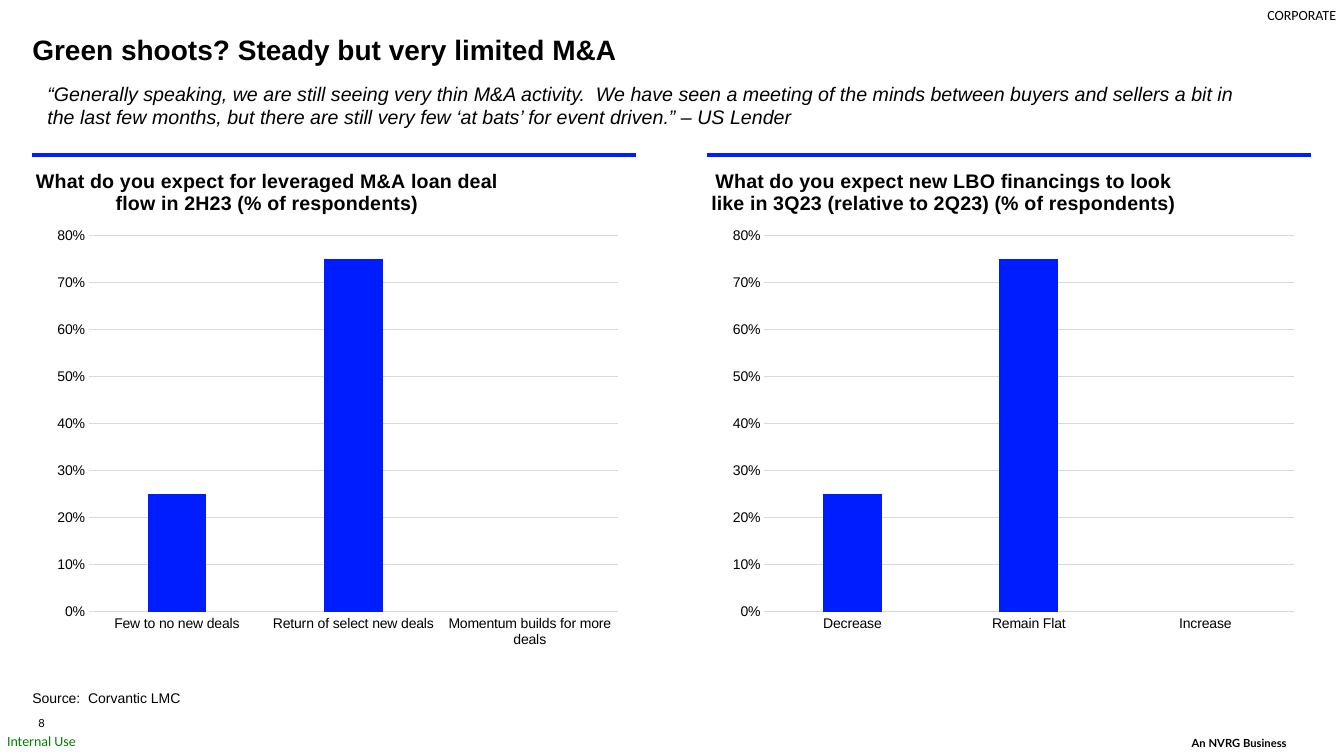
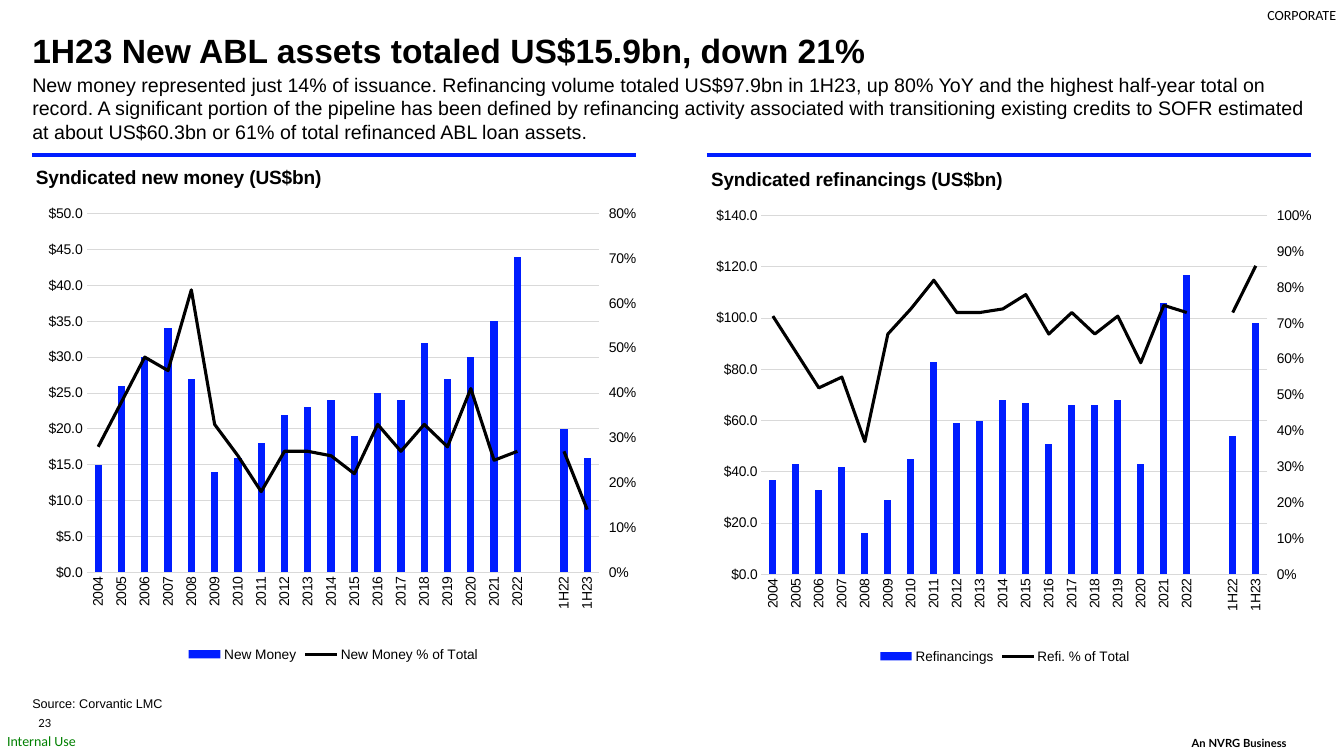
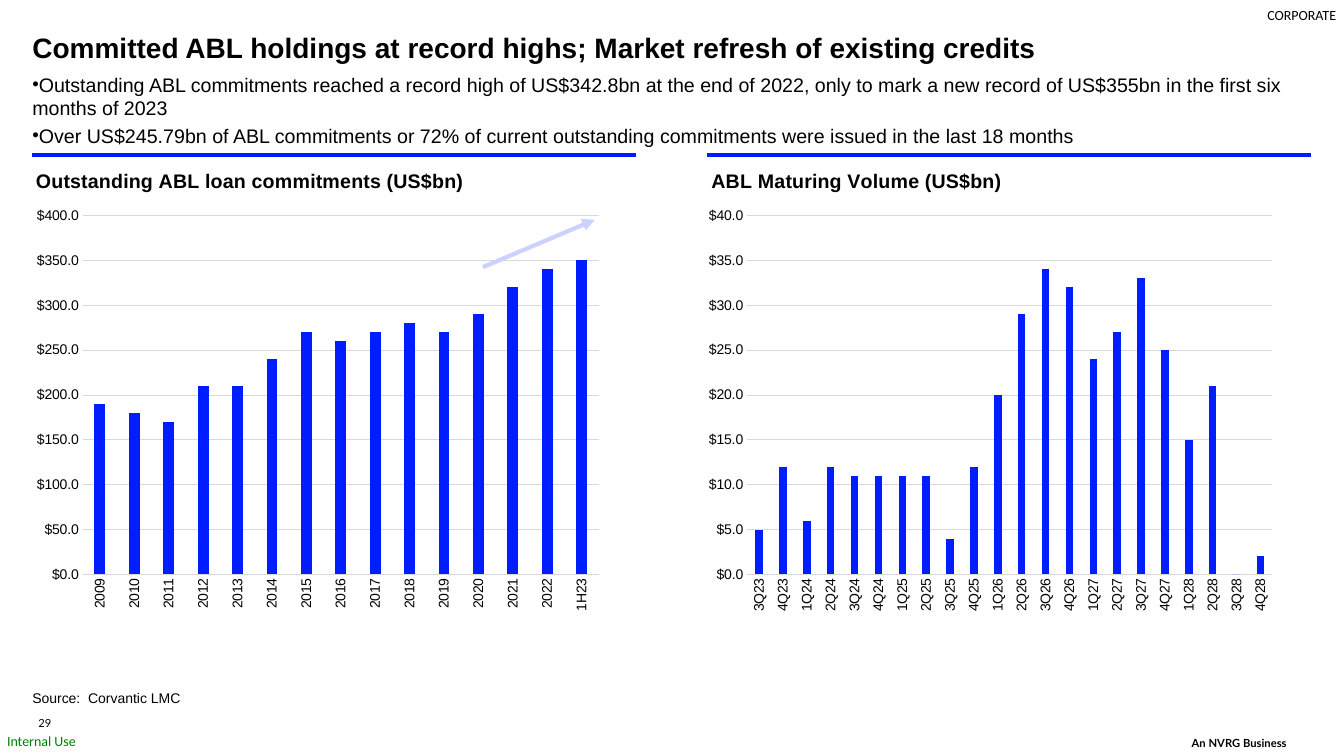
from pptx import Presentation
from pptx.chart.data import CategoryChartData
from pptx.dml.color import RGBColor
from pptx.enum import chart as ch, shapes, text
from pptx.oxml import parse_xml
from pptx.oxml.ns import nsdecls, qn
from pptx.util import Inches, Pt

BLUE = RGBColor(0x00, 0x1D, 0xFF)
PALE_BLUE = RGBColor(0xCC, 0xD2, 0xFF)
GRID_GRAY = RGBColor(0xD9, 0xD9, 0xD9)
GREEN = RGBColor(0x00, 0x80, 0x00)
BLACK = RGBColor(0, 0, 0)

BODY_FONT = "Arial"
LEFT, RIGHT, RIGHT_CHART = 0.32, 7.01, 7.02
COLUMN_WIDTH, FULL_WIDTH = 5.99, 12.68
CHART_TOP, CHART_HEIGHT = 1.63, 5
DOLLARS, PERCENT = '"$"#,##0.0', "0%"


def style_font(font, size, color=BLACK, name=BODY_FONT, bold=False, italic=False):
    font.size, font.name = Pt(size), name
    font.bold, font.italic = bold, italic
    font.color.rgb = color


def fill_frame(frame, lines, anchor=text.MSO_ANCHOR.TOP, bullet=False,
               space_before=0, line_spacing=None, **font_format):
    """Write one paragraph per line into a frame without insets."""
    frame.word_wrap = True
    frame.auto_size = text.MSO_AUTO_SIZE.NONE
    frame.vertical_anchor = anchor
    frame.margin_left = frame.margin_right = 0
    frame.margin_top = frame.margin_bottom = 0
    for index, line in enumerate(lines):
        para = frame.paragraphs[0] if index == 0 else frame.add_paragraph()
        para.alignment = text.PP_ALIGN.LEFT
        if line_spacing:
            para.line_spacing = line_spacing
        if index:
            para.space_before = Pt(space_before)
        if bullet:
            props = para._p.get_or_add_pPr()
            props.set("marL", "0")
            props.set("indent", "0")
            for xml in ('<a:buSzPct {} val="95000"/>', '<a:buFont {} typeface="Arial"/>',
                        '<a:buChar {} char="•"/>'):
                props.append(parse_xml(xml.format(nsdecls("a"))))
        span = para.add_run()
        span.text = line
        style_font(span.font, **font_format)


def add_text(page, left, top, width, height, *lines, **text_format):
    box = page.shapes.add_textbox(Inches(left), Inches(top), Inches(width), Inches(height))
    fill_frame(box.text_frame, lines, **text_format)


def add_line(page, start, end, color, arrow=False):
    line = page.shapes.add_connector(
        shapes.MSO_CONNECTOR.STRAIGHT, *(Inches(value) for value in (*start, *end)))
    line.line.color.rgb = color
    line.line.width = Pt(3)
    if arrow:
        line.line._get_or_add_ln().append(
            parse_xml(f'<a:tailEnd {nsdecls("a")} type="triangle"/>'))
    line._element.spPr.append(parse_xml(f'<a:effectLst {nsdecls("a")}/>'))


def add_page(deck, number, title, title_size=20, title_top=0.34):
    """Add a slide with its title and the marks that every slide carries."""
    page = deck.slides.add_slide(deck.slide_layouts[5])
    heading = page.shapes.title
    heading.left, heading.top = Inches(LEFT), Inches(title_top)
    heading.width, heading.height = Inches(FULL_WIDTH), Inches(0.39)
    fill_frame(heading.text_frame, [title], size=title_size, bold=True, line_spacing=0.9)

    bottom = text.MSO_ANCHOR.BOTTOM
    add_text(page, 0.38, 7.04, 0.39, 0.2, str(number), size=8, name="Lato", anchor=bottom)
    add_text(page, 11.82, 7.24, 1.5, 0.2, "An NVRG Business",
             size=8, name="Lato", bold=True, anchor=bottom)
    add_text(page, 12.57, 0.06, 0.73, 0.17, "CORPORATE", size=10, name="Calibri")
    add_text(page, 0.07, 7.27, 0.72, 0.17, "Internal Use",
             size=10, name="Calibri", color=GREEN)
    for left in (LEFT, RIGHT):
        add_line(page, (left, 1.535), (left + COLUMN_WIDTH, 1.535), BLUE)
    return page


def add_source(page, line, top=6.84, size=10):
    add_text(page, LEFT, top, 3.18, 0.27, line, size=size)


def set_layout(parent, position, **places):
    """Give a chart part a manual layout, as fractions of the chart."""
    old = parent.find(qn("c:layout"))
    if old is not None:
        parent.remove(old)
    target = '<c:layoutTarget val="inner"/>' if "w" in places else ""
    modes = '<c:xMode val="edge"/><c:yMode val="edge"/>'
    values = "".join(f'<c:{key} val="{value}"/>' for key, value in places.items())
    parent.insert(position, parse_xml(
        f'<c:layout {nsdecls("c")}><c:manualLayout>{target}{modes}{values}'
        '</c:manualLayout></c:layout>'))


def move_to_right_axis(chart, top):
    """Turn the second column series into a line on a percentage axis."""
    columns = chart.plots[0]._element
    series = columns.findall(qn("c:ser"))[1]
    invert = series.find(qn("c:invertIfNegative"))
    if invert is not None:
        series.remove(invert)
    line_plot = parse_xml(
        f'<c:lineChart {nsdecls("c")}><c:grouping val="standard"/>'
        '<c:varyColors val="0"/><c:marker val="1"/>'
        '<c:axId val="5001"/><c:axId val="5002"/></c:lineChart>')
    line_plot.insert(2, series)
    columns.addnext(line_plot)
    hidden_axis = parse_xml(
        f'<c:catAx {nsdecls("c")}><c:axId val="5001"/>'
        '<c:scaling><c:orientation val="minMax"/></c:scaling><c:delete val="1"/>'
        '<c:axPos val="b"/><c:crossAx val="5002"/><c:crosses val="autoZero"/></c:catAx>')
    right_axis = parse_xml(
        f'<c:valAx {nsdecls("c", "a")}><c:axId val="5002"/>'
        f'<c:scaling><c:orientation val="minMax"/><c:max val="{top}"/><c:min val="0"/>'
        '</c:scaling><c:delete val="0"/><c:axPos val="r"/>'
        f'<c:numFmt formatCode="{PERCENT}" sourceLinked="0"/>'
        '<c:majorTickMark val="out"/><c:minorTickMark val="none"/>'
        '<c:tickLblPos val="nextTo"/><c:spPr><a:ln><a:noFill/></a:ln></c:spPr>'
        '<c:crossAx val="5001"/><c:crosses val="max"/><c:majorUnit val="0.1"/></c:valAx>')
    chart.value_axis._element.addnext(right_axis)
    right_axis.addnext(hidden_axis)

    line = chart.plots[1].series[0]
    line.smooth = False
    line.marker.style = ch.XL_MARKER_STYLE.NONE
    line.format.line.color.rgb = BLACK
    line.format.line.width = Pt(2.25)


def style_axes(chart, number_format, top, step, upright):
    values, categories = chart.value_axis, chart.category_axis
    values.minimum_scale, values.maximum_scale, values.major_unit = 0, top, step
    values.tick_labels.number_format = number_format
    values.tick_labels.number_format_is_linked = False
    values.format.line.fill.background()
    for line in (values.major_gridlines.format.line, categories.format.line):
        line.color.rgb = GRID_GRAY
        line.width = Pt(0.75)
    for axis in (values, categories):
        axis.major_tick_mark = axis.minor_tick_mark = ch.XL_TICK_MARK.NONE
        style_font(axis.tick_labels.font, 10)
    if upright:
        body = categories._element.find(qn("c:txPr")).find(qn("a:bodyPr"))
        body.set("rot", "-5400000")
        body.set("vert", "horz")


def add_column_chart(page, left, title, categories, series, top, step, plot_area,
                     stacked=True, number_format=DOLLARS, right_top=None,
                     chart_top=CHART_TOP, title_size=14):
    """Add a column chart; plot_area is left, top, width, height in inches."""
    data = CategoryChartData()
    data.categories = categories
    for name, values in series.items():
        data.add_series(name, values)
    kind = ch.XL_CHART_TYPE.COLUMN_STACKED if stacked else ch.XL_CHART_TYPE.COLUMN_CLUSTERED
    chart = page.shapes.add_chart(
        kind, Inches(left), Inches(chart_top), Inches(COLUMN_WIDTH),
        Inches(CHART_HEIGHT), data).chart
    style_font(chart.font, 10)

    chart.has_title = True
    chart.chart_title.text_frame.text = title
    style_font(chart.chart_title.text_frame.paragraphs[0].runs[0].font, title_size, bold=True)
    set_layout(chart.chart_title._element, 1, x=0, y=0)

    columns = chart.plots[0]
    columns.vary_by_categories = False
    columns.gap_width = 219 if stacked else 200
    columns.overlap = 100 if stacked else 0
    fill = columns.series[0].format.fill
    fill.solid()
    fill.fore_color.rgb = BLUE

    style_axes(chart, number_format, top, step, upright=stacked)
    x, y, width, height = plot_area
    set_layout(columns._element.getparent(), 0, x=x / COLUMN_WIDTH, y=y / CHART_HEIGHT,
               w=width / COLUMN_WIDTH, h=height / CHART_HEIGHT)
    chart.has_legend = right_top is not None
    if chart.has_legend:
        chart.legend.position = ch.XL_LEGEND_POSITION.BOTTOM
        chart.legend.include_in_layout = False
        style_font(chart.legend.font, 9.8)
        move_to_right_axis(chart, right_top)


def build_deal_flow(deck):
    page = add_page(deck, 8, "Green shoots? Steady but very limited M&A", title_top=0.36)
    add_source(page, "Source:  Corvantic LMC")
    add_text(page, 0.47, 0.81, 12.06, 0.68,
             "“Generally speaking, we are still seeing very thin M&A activity.  We have seen a "
             "meeting of the minds between buyers and sellers a bit in the last few months, but "
             "there are still very few ‘at bats’ for event driven.” – US Lender",
             size=14, italic=True)
    surveys = [
        (LEFT, "What do you expect for leveraged M&A loan deal flow in 2H23 (% of respondents)",
         ["Few to no new deals", "Return of select new deals", "Momentum builds for more deals"]),
        (RIGHT_CHART, "What do you expect new LBO financings to look like in 3Q23 "
                      "(relative to 2Q23) (% of respondents)",
         ["Decrease", "Remain Flat", "Increase"]),
    ]
    for left, question, answers in surveys:
        add_column_chart(page, left, question, answers, {"Series 1": [0.25, 0.75, None]},
                         top=0.8, step=0.1, plot_area=(0.56, 0.71, 5.25, 3.73),
                         stacked=False, number_format=PERCENT)


def build_new_assets(deck):
    page = add_page(deck, 23, "1H23 New ABL assets totaled US$15.9bn, down 21%", title_size=24)
    add_text(page, LEFT, 0.72, FULL_WIDTH, 0.64,
             "New money represented just 14% of issuance. Refinancing volume totaled US$97.9bn in "
             "1H23, up 80% YoY and the highest half-year total on record. A significant portion "
             "of the pipeline has been defined by refinancing activity associated with "
             "transitioning existing credits to SOFR estimated at about US$60.3bn or 61% of "
             "total refinanced ABL loan assets.", size=14)
    add_source(page, "Source: Corvantic LMC", top=6.9, size=9)
    periods = [str(year) for year in range(2004, 2023)] + ["", "1H22", "1H23"]
    shared = {"plot_area": (0.54, 0.51, 5.1, 3.56), "title_size": 13.7}
    new_money = {
        "New Money": [15, 26, 30, 34, 27, 14, 16, 18, 22, 23, 24, 19, 25, 24, 32, 27, 30, 35,
                      44, None, 20, 16],
        "New Money % of Total": [0.28, 0.38, 0.48, 0.45, 0.63, 0.33, 0.26, 0.18, 0.27, 0.27,
                                 0.26, 0.22, 0.33, 0.27, 0.33, 0.28, 0.41, 0.25, 0.27, None,
                                 0.27, 0.14],
    }
    refinancings = {
        "Refinancings": [37, 43, 33, 42, 16, 29, 45, 83, 59, 60, 68, 67, 51, 66, 66, 68, 43,
                         106, 117, None, 54, 98],
        "Refi. % of Total": [0.72, 0.62, 0.52, 0.55, 0.37, 0.67, 0.74, 0.82, 0.73, 0.73, 0.74,
                             0.78, 0.67, 0.73, 0.67, 0.72, 0.59, 0.75, 0.73, None, 0.73, 0.86],
    }
    add_column_chart(page, LEFT, "Syndicated new money (US$bn)", periods, new_money,
                     top=50, step=5, right_top=0.8, chart_top=1.61, **shared)
    add_column_chart(page, RIGHT_CHART, "Syndicated refinancings (US$bn)", periods,
                     refinancings, top=140, step=20, right_top=1, **shared)


def build_commitments(deck):
    page = add_page(deck, 29,
                    "Committed ABL holdings at record highs; Market refresh of existing credits")
    add_text(page, LEFT, 0.72, FULL_WIDTH, 0.57,
             "Outstanding ABL commitments reached a record high of US$342.8bn at the end of 2022, "
             "only to mark a new record of US$355bn in the first six months of 2023",
             "Over US$245.79bn of ABL commitments or 72% of current outstanding commitments were "
             "issued in the last 18 months",
             size=14, bullet=True, space_before=2.8)
    years = [str(year) for year in range(2009, 2023)] + ["1H23"]
    quarters = [f"{quarter}Q{year}" for year in range(23, 29) for quarter in range(1, 5)][2:]
    add_column_chart(page, LEFT, "Outstanding ABL loan commitments (US$bn)", years,
                     {"Series 1": [190, 180, 170, 210, 210, 240, 270, 260, 270, 280, 270, 290,
                                   320, 340, 350]},
                     top=400, step=50, plot_area=(0.5, 0.51, 5.12, 3.56))
    add_line(page, (4.79, 2.65), (5.9, 2.18), PALE_BLUE, arrow=True)
    add_source(page, "Source:  Corvantic LMC")
    add_column_chart(page, RIGHT_CHART, "ABL Maturing Volume (US$bn)", quarters,
                     {"Series 1": [5, 12, 6, 12, 11, 11, 11, 11, 4, 12, 20, 29, 34, 32, 24, 27,
                                   33, 25, 15, 21, 0, 2]},
                     top=40, step=5, plot_area=(0.39, 0.51, 5.21, 3.56))


def main():
    deck = Presentation()
    deck.slide_width, deck.slide_height = Inches(13.33), Inches(7.5)
    build_deal_flow(deck)
    build_new_assets(deck)
    build_commitments(deck)
    deck.save("out.pptx")


if __name__ == "__main__":
    main()
